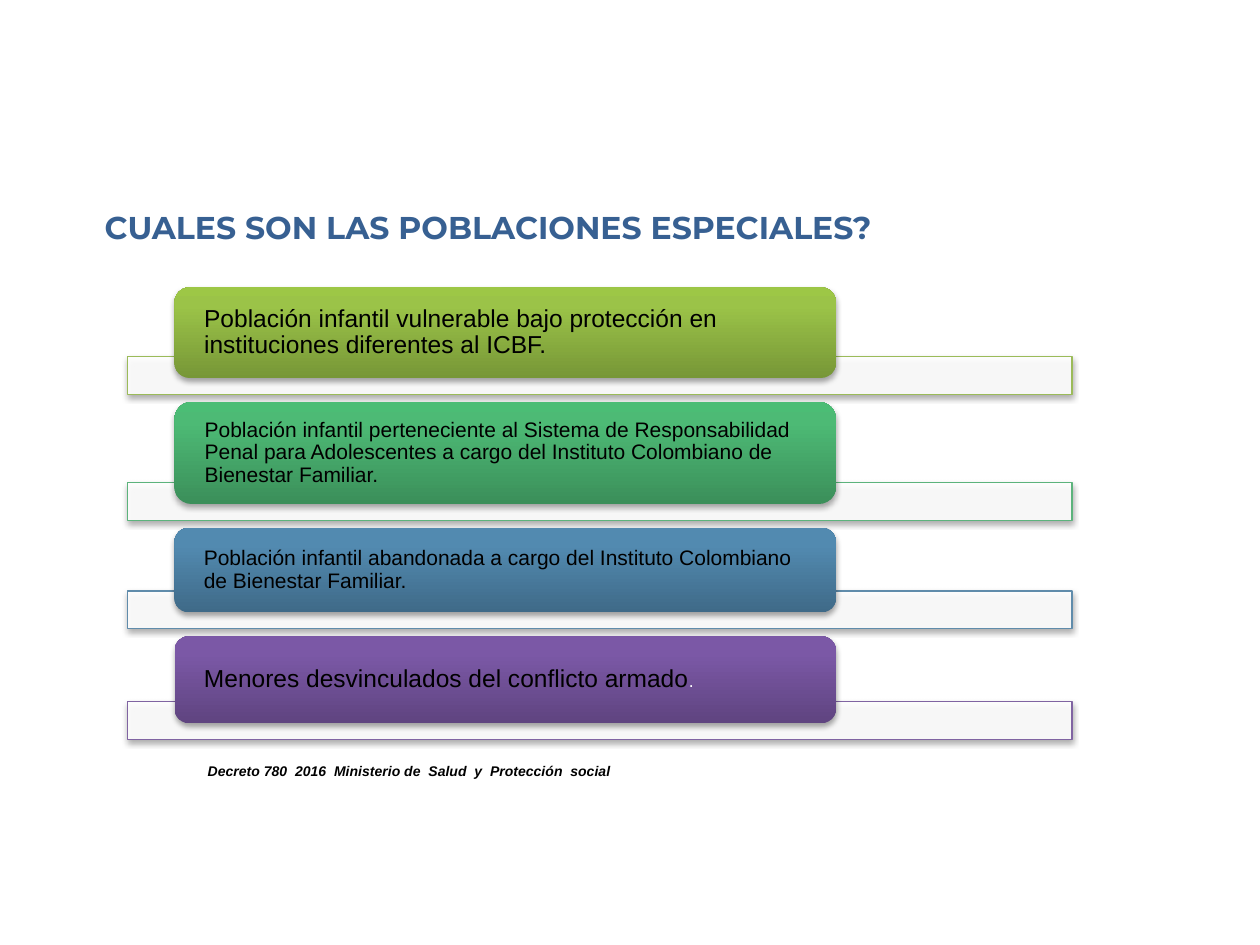
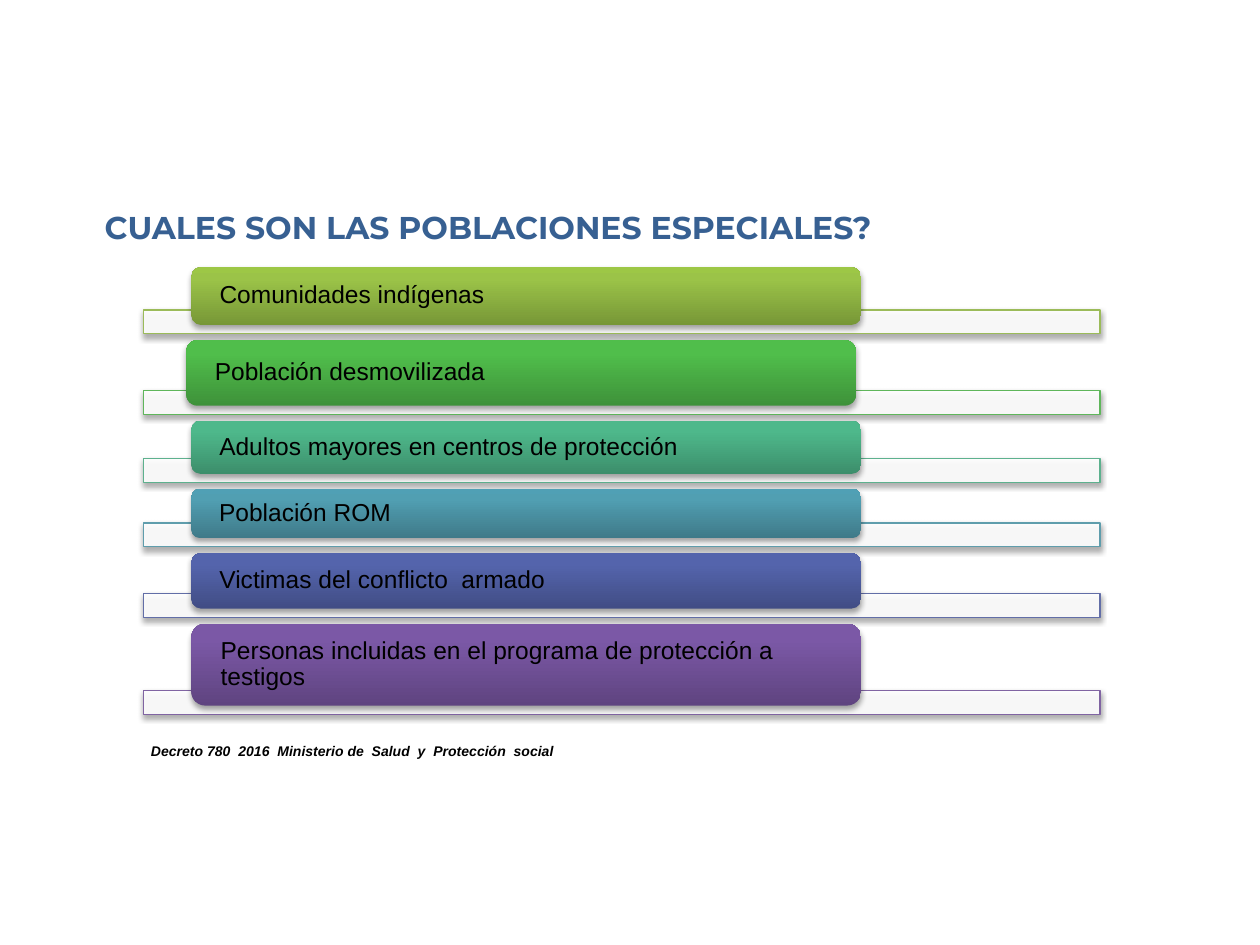
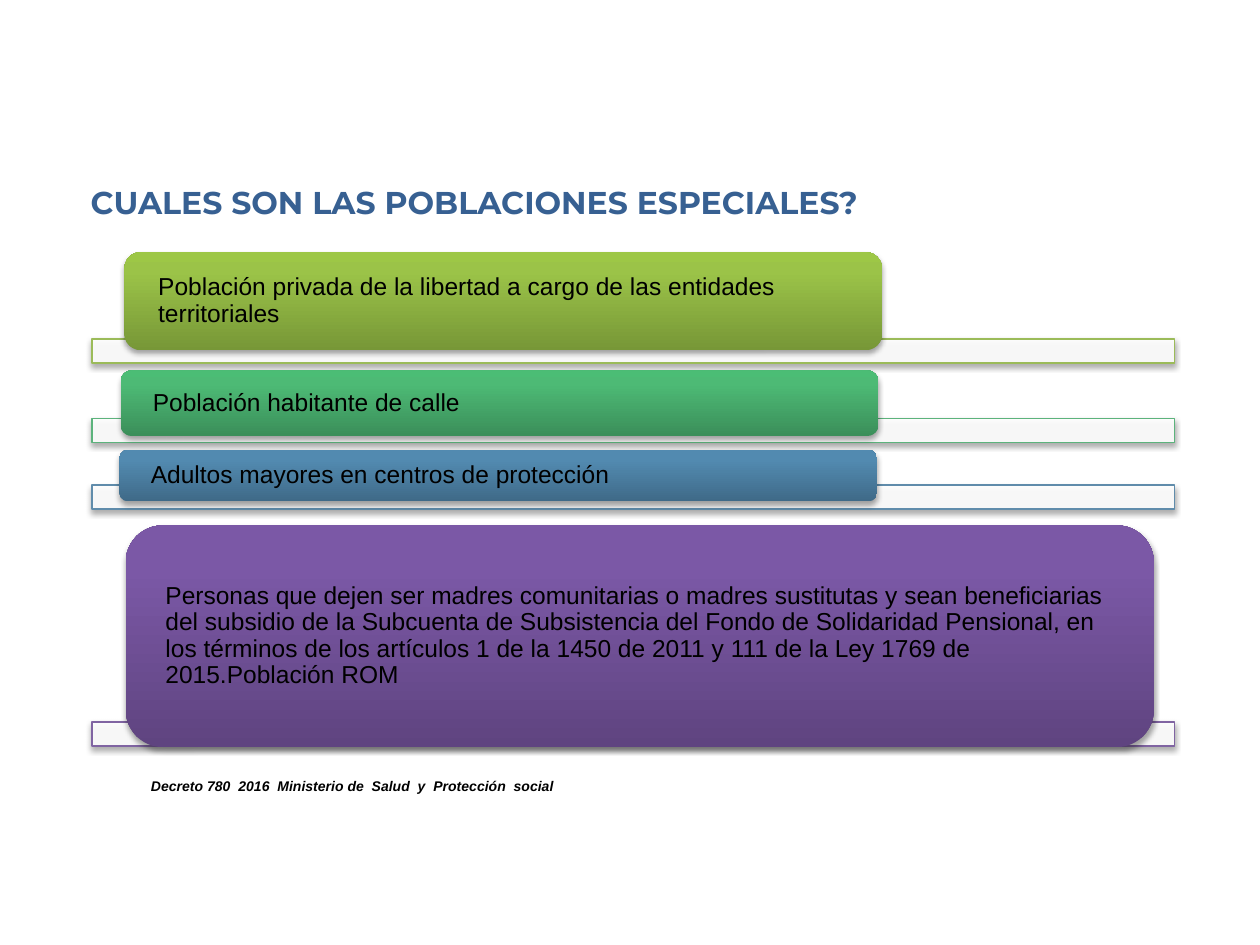
"""Build three slides listing the special populations as stacked, coloured labels."""
from dataclasses import dataclass
from typing import Optional

from lxml import etree
from pptx import Presentation
from pptx.dml.color import RGBColor
from pptx.enum.shapes import MSO_SHAPE
from pptx.enum.text import MSO_ANCHOR, MSO_AUTO_SIZE, PP_ALIGN
from pptx.oxml.ns import qn
from pptx.util import Inches, Pt

RECT, ROUNDED = MSO_SHAPE.RECTANGLE, MSO_SHAPE.ROUNDED_RECTANGLE
TOP, MIDDLE, LEFT = MSO_ANCHOR.TOP, MSO_ANCHOR.MIDDLE, PP_ALIGN.LEFT
NO_FIT = MSO_AUTO_SIZE.NONE
TITLE_ONLY = 5


@dataclass(frozen=True)
class Theme:
    title_font: str = "Montserrat"
    body_font: str = "Arial"
    title_color: str = "376092"
    black: str = "000000"
    white: str = "FFFFFF"
    title_size: int = 18
    label_size: int = 14
    small_size: int = 12
    stop_size: int = 10
    source_size: int = 8


@dataclass(frozen=True)
class Accent:
    line: str
    dark: str
    mid: str
    light: str


@dataclass(frozen=True)
class Group:
    text: str
    accent: Accent
    height: float
    size: int = Theme.label_size
    nudge: float = 0
    overlap: Optional[float] = None
    gap: Optional[float] = None
    share: float = 0.7
    white_end: str = ""


@dataclass(frozen=True)
class Stack:
    title_at: tuple
    source_at: tuple
    left: float
    top: float
    width: float
    bar_height: float
    indent: float
    overlap: float
    gap: float
    inset: float
    groups: list


THEME = Theme()
LIME = Accent("9BBB59", "779737", "9BC348", "9DC746")
GRASS = Accent("5FB65B", "3E923A", "50BE4B", "4FC149")
GREEN = Accent("5CB37C", "3B8F5A", "4DBA75", "4BBD75")
JADE = Accent("5DB18E", "3C8E6B", "4EB88B", "4CBB8C")
TEAL = Accent("5F9DAC", "3F7A89", "519FB2", "50A0B5")
BLUE = Accent("608CAB", "3F6A88", "528AB0", "518BB3")
INDIGO = Accent("626EA7", "414D85", "5464AC", "5363AF")
PURPLE = Accent("8064A2", "5F4480", "7B58A6", "7C57A8")

TITLE = "CUALES SON LAS POBLACIONES ESPECIALES?"
SOURCE = "Decreto 780  2016  Ministerio de  Salud  y  Protección  social"
STACKS = [
    Stack((0.73, 1.6), (1.55, 6), left=1.01, top=2.28, width=7.5, bar_height=0.3,
          indent=0.05, overlap=0.17, gap=0.06, inset=0.2, groups=[
        Group("Población infantil vulnerable bajo protección en instituciones "
              "diferentes al ICBF.", LIME, 0.72),
        Group("Población infantil perteneciente al Sistema de Responsabilidad Penal "
              "para Adolescentes a cargo del Instituto Colombiano de Bienestar "
              "Familiar.", GREEN, 0.81, THEME.small_size),
        Group("Población infantil abandonada a cargo del Instituto Colombiano de "
              "Bienestar Familiar.", BLUE, 0.67, THEME.small_size),
        Group("Menores desvinculados del conflicto armado", PURPLE, 0.69,
              white_end="."),
    ]),
    Stack((0.73, 1.6), (1.1, 5.84), left=1.14, top=2.12, width=7.59, bar_height=0.19,
          indent=0.05, overlap=0.12, gap=0.05, inset=0.2, groups=[
        Group("Comunidades indígenas", LIME, 0.46),
        Group("Población desmovilizada", GRASS, 0.52, nudge=-0.04),
        Group("Adultos mayores en centros de protección", JADE, 0.42),
        Group("Población ROM", TEAL, 0.39),
        Group("Victimas del conflicto  armado", INDIGO, 0.44),
        Group("Personas incluidas en el programa de protección a testigos",
              PURPLE, 0.65),
    ]),
    Stack((0.62, 1.4), (1.1, 6.12), left=0.73, top=2, width=8.59, bar_height=0.19,
          indent=0.03, overlap=0.13, gap=0.06, inset=0.23, groups=[
        Group("Población privada de la libertad a cargo de las entidades "
              "territoriales", LIME, 0.78, overlap=0.09),
        Group("Población habitante de calle", GREEN, 0.52, nudge=-0.03, overlap=0.14),
        Group("Adultos mayores en centros de protección", BLUE, 0.41, nudge=-0.04),
        Group("Personas que dejen ser madres comunitarias o madres sustitutas y sean "
              "beneficiarias del subsidio de la Subcuenta de Subsistencia del Fondo de "
              "Solidaridad Pensional, en los términos de los artículos 1 de la 1450 de "
              "2011 y 111 de la Ley 1769 de 2015.Población ROM", PURPLE, 1.76,
              nudge=0.01, overlap=0.2, gap=0.13, share=0.95),
    ]),
]


def add_run(paragraph, text, font_name, size, color, bold=False, italic=False):
    run = paragraph.add_run()
    run.text = text
    font = run.font
    font.name, font.size, font.bold, font.italic = font_name, Pt(size), bold, italic
    font.color.rgb = RGBColor.from_string(color)


def add_color(parent, color, alpha=None):
    node = etree.SubElement(parent, qn("a:srgbClr"), val=color)
    if alpha is not None:
        etree.SubElement(node, qn("a:alpha"), val=str(alpha * 1000))


def add_soft_shadow(shape):
    shape.shadow.inherit = False
    effects = shape._element.spPr.find(qn("a:effectLst"))
    shadow = etree.SubElement(effects, qn("a:outerShdw"), blurRad="40000",
                              dist="23000", dir="5400000", rotWithShape="0")
    add_color(shadow, THEME.black, 35)


def fill_gradient(shape, accent):
    shape.fill.background()
    properties = shape._element.spPr
    gradient = etree.Element(qn("a:gradFill"), rotWithShape="1")
    stops = etree.SubElement(gradient, qn("a:gsLst"))
    for share, color in ((0, accent.dark), (80, accent.mid), (100, accent.light)):
        add_color(etree.SubElement(stops, qn("a:gs"), pos=str(share * 1000)), color)
    etree.SubElement(gradient, qn("a:lin"), ang="16200000", scaled="0")
    properties.replace(properties.find(qn("a:noFill")), gradient)


def add_bar(slide, stack, top, accent):
    bar = slide.shapes.add_shape(RECT, *map(Inches, (
        stack.left, top, stack.width, stack.bar_height)))
    bar.fill.solid()
    bar.fill.fore_color.rgb = RGBColor.from_string(THEME.white)
    color = bar._element.spPr.find(qn("a:solidFill"))[0]
    etree.SubElement(color, qn("a:alpha"), val="90000")
    bar.line.color.rgb = RGBColor.from_string(accent.line)
    bar.line.width = Pt(0.75)
    add_soft_shadow(bar)


def add_label(slide, stack, top, group):
    left = stack.left + stack.width * stack.indent + group.nudge
    label = slide.shapes.add_shape(ROUNDED, *map(Inches, (
        left, top, stack.width * group.share, group.height)))
    fill_gradient(label, group.accent)
    label.line.fill.background()
    add_soft_shadow(label)
    frame = label.text_frame
    frame.word_wrap, frame.vertical_anchor = True, MIDDLE
    frame.margin_left = frame.margin_right = Inches(stack.inset)
    frame.margin_top = frame.margin_bottom = 0
    paragraph = frame.paragraphs[0]
    paragraph.alignment, paragraph.line_spacing = LEFT, 0.9
    add_run(paragraph, group.text, THEME.body_font, group.size, THEME.black)
    if group.white_end:
        add_run(paragraph, group.white_end, THEME.body_font, THEME.stop_size,
                THEME.white)


def add_title(slide, position):
    title = slide.shapes.title
    title.left, title.top = map(Inches, position)
    title.width, title.height = Inches(7.1), Inches(0.4)
    frame = title.text_frame
    frame.auto_size, frame.word_wrap, frame.vertical_anchor = NO_FIT, False, TOP
    paragraph = frame.paragraphs[0]
    paragraph.alignment = LEFT
    add_run(paragraph, TITLE, THEME.title_font, THEME.title_size,
            THEME.title_color, bold=True)


def add_source(slide, position):
    source = slide.shapes.add_textbox(*map(Inches, (*position, 6.4, 0.24)))
    source.text_frame.word_wrap = True
    add_run(source.text_frame.paragraphs[0], SOURCE, THEME.body_font,
            THEME.source_size, THEME.black, bold=True, italic=True)


def add_stack(slide, stack):
    bottom = None
    for group in stack.groups:
        gap = stack.gap if group.gap is None else group.gap
        overlap = stack.overlap if group.overlap is None else group.overlap
        top = stack.top if bottom is None else bottom + gap
        bar_top = top + group.height - overlap
        add_bar(slide, stack, bar_top, group.accent)
        add_label(slide, stack, top, group)
        bottom = bar_top + stack.bar_height


def main():
    deck = Presentation()
    deck.slide_width, deck.slide_height = Inches(10), Inches(7.5)
    for stack in STACKS:
        slide = deck.slides.add_slide(deck.slide_layouts[TITLE_ONLY])
        add_title(slide, stack.title_at)
        add_stack(slide, stack)
        add_source(slide, stack.source_at)
    deck.save("out.pptx")


if __name__ == "__main__":
    main()
